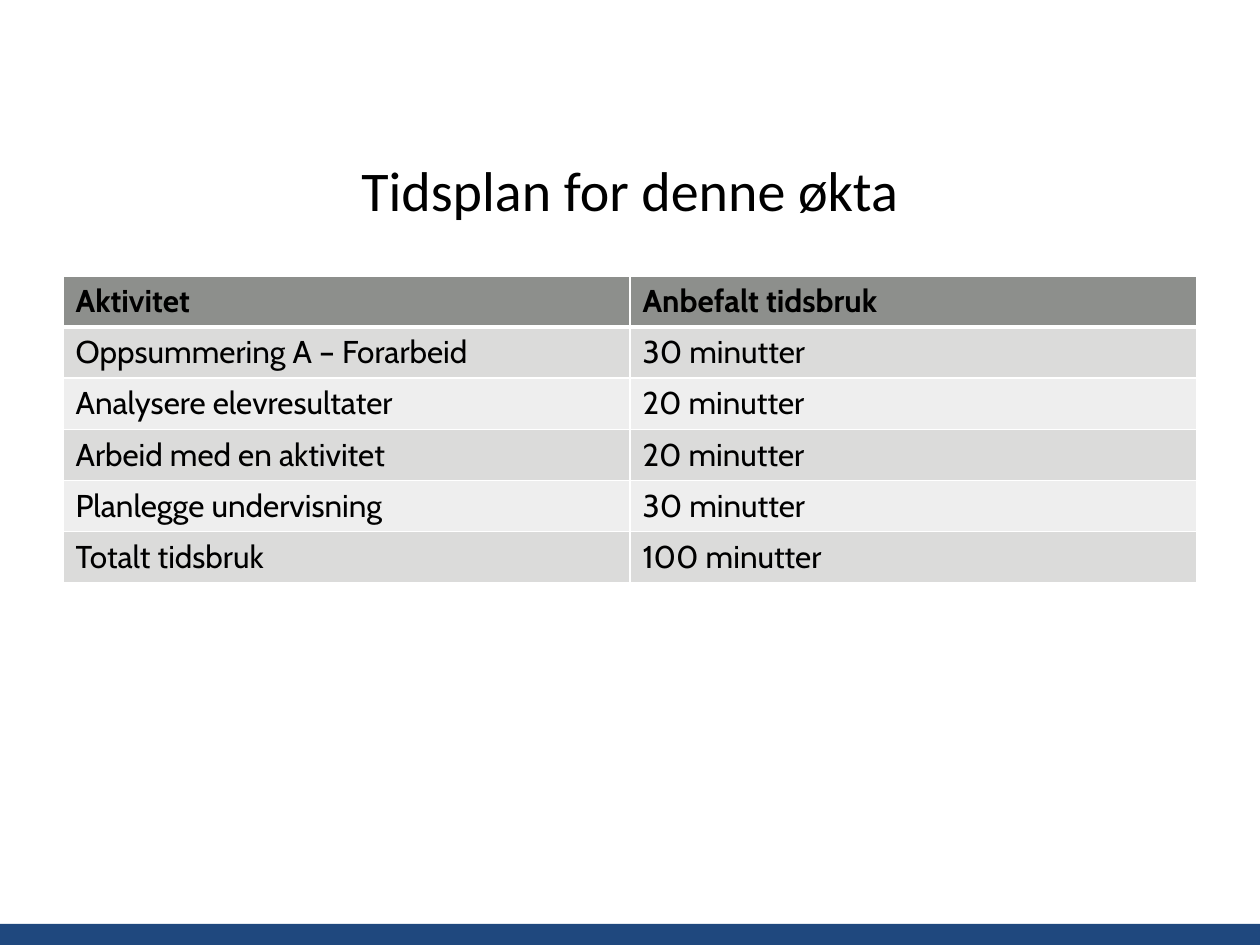
from lxml import etree
from pptx import Presentation
from pptx.dml.color import RGBColor
from pptx.enum.shapes import MSO_SHAPE
from pptx.enum.text import MSO_ANCHOR, PP_ALIGN
from pptx.oxml.ns import qn
from pptx.util import Pt

PX = 914400 // 126  # EMU in one px
RECTANGLE = MSO_SHAPE.RECTANGLE
MIDDLE = MSO_ANCHOR.MIDDLE
CENTER = PP_ALIGN.CENTER

BLACK = RGBColor(0x00, 0x00, 0x00)
WHITE = RGBColor(0xFF, 0xFF, 0xFF)
NAVY = RGBColor(0x1F, 0x48, 0x7E)
HEADER_GRAY = RGBColor(0x8D, 0x8F, 0x8C)
BAND_GRAYS = (RGBColor(0xEE, 0xEE, 0xEE), RGBColor(0xDB, 0xDB, 0xDA))

SCHEDULE = [
    ("Aktivitet", "Anbefalt tidsbruk"),
    ("Oppsummering A – Forarbeid", "30 minutter"),
    ("Analysere elevresultater", "20 minutter"),
    ("Arbeid med en aktivitet", "20 minutter"),
    ("Planlegge undervisning", "30 minutter"),
    ("Totalt tidsbruk", "100 minutter"),
]
ROW_HEIGHT = 51
COLUMN_WIDTH = 567


def px(*lengths):
    return [length * PX for length in lengths]


def style_font(font, name, size, bold=False):
    font.name = name
    font.size = Pt(size)
    font.bold = bold
    font.color.rgb = BLACK


def add_footer_bar(page):
    bar = page.shapes.add_shape(RECTANGLE, *px(0, 924, 1260, 21))
    bar.shadow.inherit = False
    bar.fill.solid()
    bar.fill.fore_color.rgb = NAVY
    bar.line.fill.background()


def set_title(page, text):
    title = page.shapes.title
    title.left, title.top, title.width, title.height = px(63, 126, 1134, 127)
    frame = title.text_frame
    frame.text = text
    frame.vertical_anchor = MIDDLE
    paragraph = frame.paragraphs[0]
    paragraph.alignment = CENTER
    style_font(paragraph.runs[0].font, "Calibri", 32)


def set_borders(cell, **widths):
    properties = cell._tc.get_or_add_tcPr()
    for side in ("L", "R", "T", "B"):
        line = etree.SubElement(properties, qn(f"a:ln{side}"),
                                w=str(Pt(widths.get(side, 1))))
        fill = etree.SubElement(line, qn("a:solidFill"))
        etree.SubElement(fill, qn("a:srgbClr"), val=str(WHITE))


def fill_cell(cell, text, row):
    # The rule between the header and the body is heavier
    set_borders(cell, T=3 if row == 1 else 1, B=3 if row == 0 else 1)
    cell.fill.solid()
    cell.fill.fore_color.rgb = BAND_GRAYS[row % 2] if row else HEADER_GRAY
    cell.text_frame.text = text
    run = cell.text_frame.paragraphs[0].runs[0]
    style_font(run.font, "Cabin", 18, bold=row == 0)


def add_schedule(page):
    rows, columns = len(SCHEDULE), len(SCHEDULE[0])
    frame = page.shapes.add_table(
        rows, columns,
        *px(63, 276, columns * COLUMN_WIDTH, rows * ROW_HEIGHT))
    for row, texts in enumerate(SCHEDULE):
        for column, text in enumerate(texts):
            fill_cell(frame.table.cell(row, column), text, row)


def main():
    deck = Presentation()
    deck.slide_width, deck.slide_height = px(1260, 945)
    page = deck.slides.add_slide(deck.slide_layouts[5])  # title only
    add_footer_bar(page)
    set_title(page, "Tidsplan for denne økta")
    add_schedule(page)
    deck.save("out.pptx")


if __name__ == "__main__":
    main()
